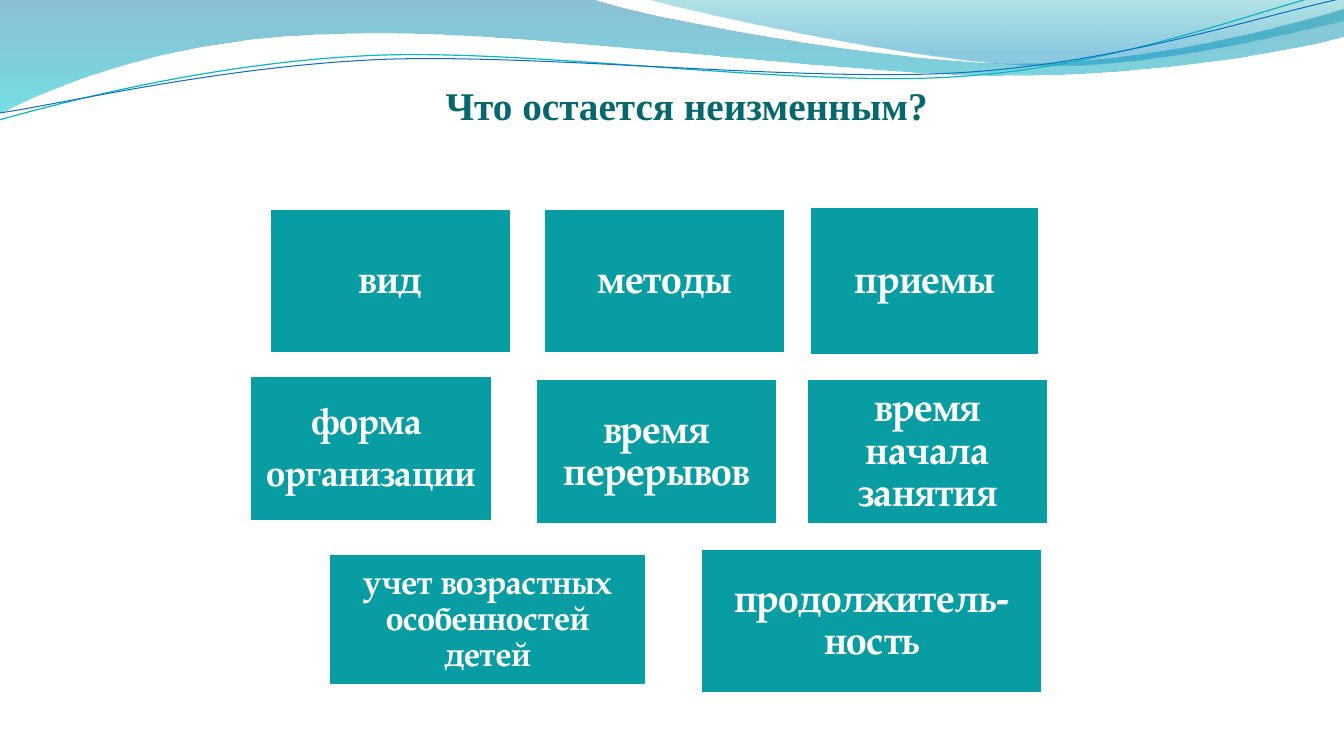
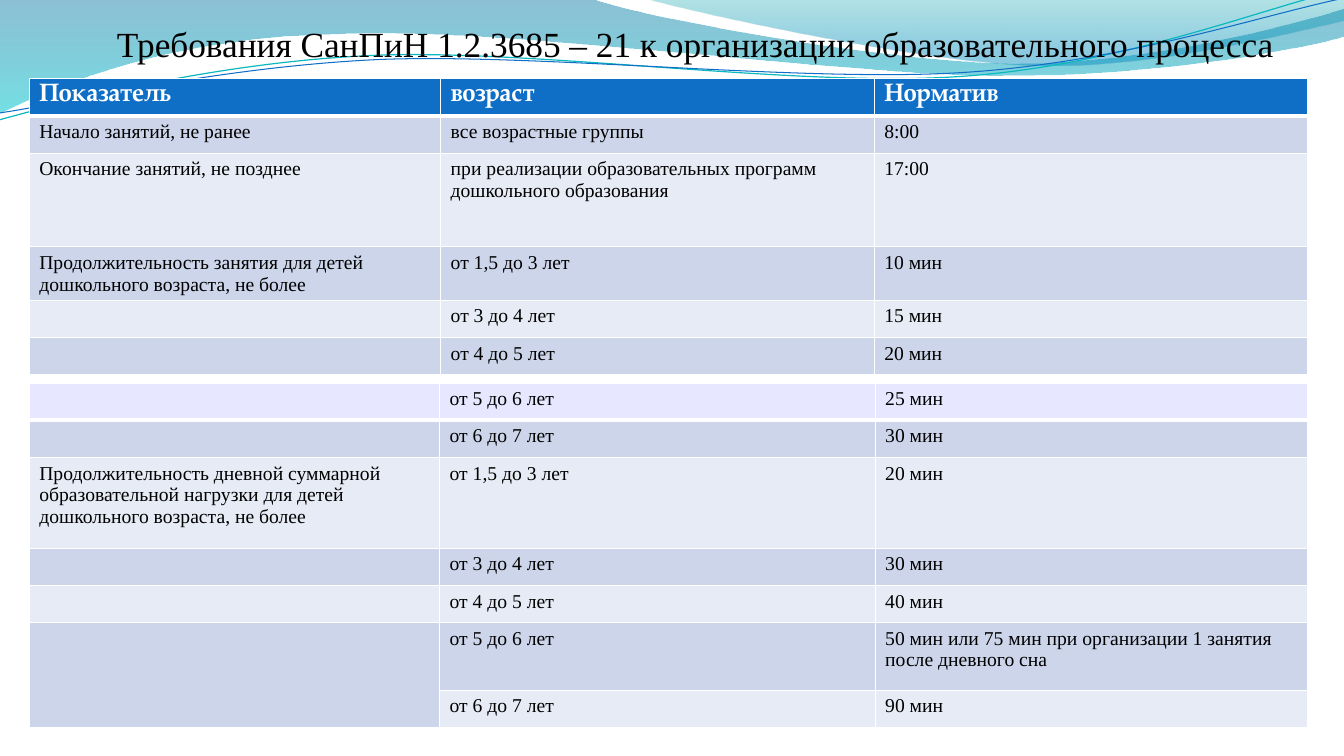
from dataclasses import dataclass

from lxml.etree import SubElement
from pptx import Presentation
from pptx.dml.color import RGBColor
from pptx.enum.shapes import MSO_SHAPE
from pptx.enum.text import MSO_ANCHOR, MSO_AUTO_SIZE, PP_ALIGN
from pptx.oxml.ns import qn
from pptx.presentation import Presentation as Deck
from pptx.shapes.autoshape import Shape
from pptx.slide import Slide
from pptx.table import _Cell as Cell
from pptx.text.text import _Paragraph as Paragraph
from pptx.util import Inches, Pt

COLORS = {
    "white": "FFFFFF",
    "black": "000000",
    "heading": "06686C",
    "tile": "089CA3",
    "header": "0F6FC6",
    "lavender": "E7E7FF",
    "band_dark": "CCD5EA",
    "band_light": "E7EBF5",
    "wave_blue": "0074A1",
    "wave_cyan": "00C6CF",
    "wave_teal": "00A1A9",
    "wave_sky": "008BBF",
    "thread_teal": "0AB8BF",
    "thread_blue": "0F6FC6",
}
SERIF = "Times New Roman"
PAGELLA = "TeX Gyre Pagella"


@dataclass(frozen=True)
class Stop:
    color: str
    position: float
    opacity: int


@dataclass(frozen=True)
class Wave:
    start: tuple[float, float]
    segments: list[tuple[float, ...]]
    stops: tuple[Stop, ...] = ()
    line: str = ""
    line_width: float = 0


@dataclass(frozen=True)
class Tile:
    text: str
    left: float
    top: float
    width: float = 2.4
    height: float = 1.44
    size: int = 28


@dataclass(frozen=True)
class Norms:
    top: float
    columns: list[float]
    heights: list[float]
    rows: list[tuple[str, str, str]]
    first_fill: str
    has_header: bool


WAVES = [
    Wave((0, 0), [
        (5.87, -0.01),
        (6.34, 0.17, 8.85, 0.63, 10.11, 0.63),
        (11.38, 0.63, 12.78, 0.26, 13.33, 0.09),
        (13.35, 0.36),
        (13.11, 0.44, 11.6, 0.76, 9.94, 0.75),
        (8.29, 0.75, 5.09, 0.28, 3.43, 0.34),
        (1.72, 0.36, 0.61, 0.83, -0.01, 1.13),
        (0, 0),
    ], (Stop("wave_blue", 0, 45), Stop("wave_cyan", 1, 55))),
    Wave((6.39, -0.01), [
        (6.79, 0.11, 9.09, 0.62, 10.25, 0.65),
        (11.41, 0.69, 12.82, 0.32, 13.33, 0.21),
        (13.33, 0),
        (6.39, -0.01),
    ], (Stop("wave_teal", 0, 30), Stop("wave_sky", 0.8, 45))),
    Wave((-0.01, 1.19), [
        (0.64, 1.01, 2.11, 0.62, 3.69, 0.55),
        (5.27, 0.48, 7.9, 0.87, 9.5, 0.76),
        (11.1, 0.66, 12.52, 0.08, 13.31, -0.1),
    ], line="thread_teal", line_width=0.85),
    Wave((0, 1.12), [
        (0.63, 1.03, 2.18, 0.66, 3.78, 0.59),
        (5.37, 0.53, 7.96, 0.82, 9.55, 0.72),
        (11.15, 0.62, 12.55, 0.14, 13.34, -0.02),
    ], line="thread_blue", line_width=0.75),
]

TILES = [
    Tile("вид", 2.67, 2.07),
    Tile("методы", 5.39, 2.07),
    Tile("приемы", 8.03, 2.05, 2.28, 1.48),
    Tile("учет возрастных особенностей детей", 3.26, 5.49, 3.15, 1.31, 24),
    Tile("время перерывов", 5.31, 3.76),
    Tile("время начала занятия", 8, 3.76),
    Tile("форма \nорганизации", 2.48, 3.73, size=26),
    Tile("продолжитель-ность", 6.95, 5.44, 3.39),
]

LESSON_NORMS = Norms(
    0.78, [4.08, 4.3, 4.3], [0.37, 0.37, 0.93, 0.53, 0.37, 0.37],
    [
        ("Показатель", "возраст", "Норматив"),
        ("Начало занятий, не ранее", "все возрастные группы", "8:00"),
        ("Окончание занятий, не позднее",
         "при реализации образовательных программ дошкольного образования", "17:00"),
        ("Продолжительность занятия для детей дошкольного возраста, не более",
         "от 1,5 до 3 лет", "10 мин"),
        ("", "от 3 до 4 лет", "15 мин"),
        ("", "от 4 до 5 лет", "20 мин"),
    ], "header", True)

DAILY_NORMS = Norms(
    3.8, [4.07, 4.32, 4.29], [0.37, 0.37, 0.9, 0.37, 0.37, 0.67, 0.37],
    [
        ("", "от 5 до 6 лет", "25 мин"),
        ("", "от 6 до 7 лет", "30 мин"),
        ("Продолжительность дневной суммарной образовательной нагрузки "
         "для детей дошкольного возраста, не более", "от 1,5 до 3 лет", "20 мин"),
        ("", "от 3 до 4 лет", "30 мин"),
        ("", "от 4 до 5 лет", "40 мин"),
        ("", "от 5 до 6 лет",
         "50 мин или 75 мин при организации 1 занятия после дневного сна"),
        ("", "от 6 до 7 лет", "90 мин"),
    ], "lavender", False)


def rgb(name: str) -> RGBColor:
    return RGBColor.from_string(COLORS[name])


def style(paragraph: Paragraph, font: str, size: float, color: str, bold: bool) -> None:
    paragraph.font.name = font
    paragraph.font.size = Pt(size)
    paragraph.font.bold = bold
    paragraph.font.color.rgb = rgb(color)


def bend(ribbon: Shape, segments: list[tuple[float, ...]]) -> None:
    sides = list(ribbon.element.spPr.iter(qn("a:lnTo")))
    for side, segment in zip(sides, segments):
        if len(segment) == 2:
            continue
        curve = side.getparent().makeelement(qn("a:cubicBezTo"))
        for x, y in zip(segment[::2], segment[1::2]):
            SubElement(curve, qn("a:pt"), x=str(Inches(x) - ribbon.left),
                       y=str(Inches(y) - ribbon.top))
        side.getparent().replace(side, curve)


def fill_wave(ribbon: Shape, stops: tuple[Stop, ...]) -> None:
    ribbon.fill.gradient()
    ribbon.fill.gradient_angle = 270
    for target, stop in zip(ribbon.fill.gradient_stops, stops):
        target.color.rgb = rgb(stop.color)
        target.position = stop.position
    for color, stop in zip(ribbon.element.spPr.iter(qn("a:srgbClr")), stops):
        SubElement(color, qn("a:alpha"), val=str(stop.opacity * 1000))


def add_waves_to_master(deck: Deck, slide: Slide) -> None:
    for number, wave in enumerate(WAVES):
        anchors = [(Inches(s[-2]), Inches(s[-1])) for s in wave.segments]
        builder = slide.shapes.build_freeform(*map(Inches, wave.start))
        builder.add_line_segments(anchors, close=bool(wave.stops))
        ribbon = builder.convert_to_shape()
        bend(ribbon, wave.segments)
        ribbon.shadow.inherit = False
        if wave.stops:
            fill_wave(ribbon, wave.stops)
            ribbon.line.fill.background()
        else:
            ribbon.fill.background()
            ribbon.line.color.rgb = rgb(wave.line)
            ribbon.line.width = Pt(wave.line_width)
        ribbon.element.nvSpPr.cNvPr.set("id", str(100 + number))
        deck.slide_master.shapes.element.append(ribbon.element)


def add_titled_slide(deck: Deck, text: str, box: tuple[float, float, float, float],
                     size: float, color: str, bold: bool, align: PP_ALIGN) -> Slide:
    slide = deck.slides.add_slide(deck.slide_layouts[5])
    title = slide.shapes.title
    title.left, title.top, title.width, title.height = map(Inches, box)
    frame = title.text_frame
    frame.text = text
    frame.word_wrap = True
    frame.auto_size = MSO_AUTO_SIZE.NONE
    frame.vertical_anchor = MSO_ANCHOR.MIDDLE
    frame.margin_left = frame.margin_right = frame.margin_bottom = 0
    frame.margin_top = Inches(0.05)
    heading = frame.paragraphs[0]
    heading.alignment = align
    heading.line_spacing = 0.9
    style(heading, SERIF, size, color, bold)
    return slide


def add_tile(slide: Slide, tile: Tile) -> None:
    block = slide.shapes.add_shape(
        MSO_SHAPE.RECTANGLE, Inches(tile.left), Inches(tile.top),
        Inches(tile.width), Inches(tile.height))
    block.shadow.inherit = False
    block.fill.solid()
    block.fill.fore_color.rgb = rgb("tile")
    block.line.color.rgb = rgb("white")
    block.line.width = Pt(2)
    frame = block.text_frame
    frame.text = tile.text
    frame.word_wrap = True
    frame.vertical_anchor = MSO_ANCHOR.MIDDLE
    inset = Inches(round(0.12 * tile.size / 28, 2))
    frame.margin_left = frame.margin_right = inset
    frame.margin_top = frame.margin_bottom = inset
    for paragraph in frame.paragraphs:
        paragraph.alignment = PP_ALIGN.CENTER
        paragraph.line_spacing = 0.9
        style(paragraph, PAGELLA, tile.size, "white", True)
    for paragraph in frame.paragraphs[:-1]:
        paragraph.space_after = Pt(round(0.35 * tile.size))


def add_borders(cell: Cell, row: int) -> None:
    widths = {"L": 1, "R": 1, "T": 1, "B": 3 if row == 0 else 1}
    properties = cell._tc.get_or_add_tcPr()
    for side, width in widths.items():
        border = SubElement(properties, qn(f"a:ln{side}"), w=str(Pt(width)))
        solid = SubElement(border, qn("a:solidFill"))
        SubElement(solid, qn("a:srgbClr"), val=COLORS["white"])


def add_norms(slide: Slide, norms: Norms) -> None:
    table = slide.shapes.add_table(
        len(norms.rows), len(norms.columns), Inches(0.29), Inches(norms.top),
        Inches(sum(norms.columns)), Inches(sum(norms.heights))).table
    table.first_row = table.horz_banding = False
    for column, width in zip(table.columns, norms.columns):
        column.width = Inches(width)
    for row, (height, texts) in enumerate(zip(norms.heights, norms.rows)):
        table.rows[row].height = Inches(height)
        fill = norms.first_fill if row == 0 else "band_dark" if row % 2 else "band_light"
        for column, text in enumerate(texts):
            cell = table.cell(row, column)
            cell.text = text
            add_borders(cell, row)
            cell.fill.solid()
            cell.fill.fore_color.rgb = rgb(fill)
            paragraph = cell.text_frame.paragraphs[0]
            if norms.has_header and row == 0:
                style(paragraph, PAGELLA, 18, "white", True)
            else:
                style(paragraph, SERIF, 14, "black", False)
    if not norms.has_header:
        table.cell(5, 0).merge(table.cell(6, 0))


def main() -> None:
    deck = Presentation()
    deck.slide_width, deck.slide_height = Inches(13.33), Inches(7.5)

    constants = add_titled_slide(
        deck, "Что остается неизменным?", (0.29, 0.46, 13.04, 1.16),
        28, "heading", True, PP_ALIGN.CENTER)
    add_waves_to_master(deck, constants)
    for tile in TILES:
        add_tile(constants, tile)

    requirements = add_titled_slide(
        deck, "Требования СанПиН 1.2.3685 – 21 к организации образовательного процесса",
        (1.16, 0.09, 12.17, 0.69), 25.2, "black", False, PP_ALIGN.LEFT)
    for norms in (LESSON_NORMS, DAILY_NORMS):
        add_norms(requirements, norms)

    deck.save("out.pptx")


if __name__ == "__main__":
    main()
